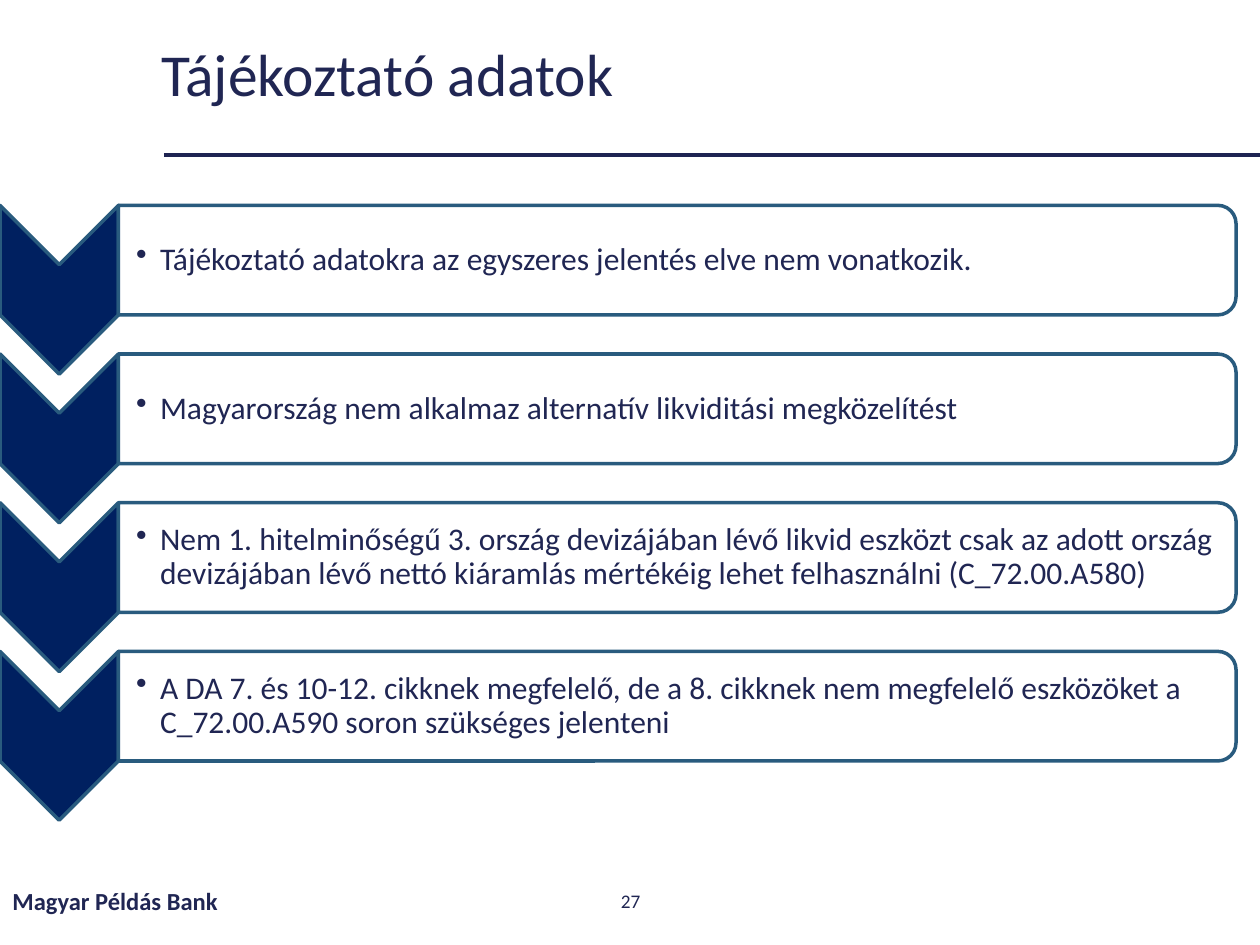
from lxml.etree import SubElement
from pptx import Presentation
from pptx.dml.color import RGBColor
from pptx.enum.shapes import MSO_CONNECTOR, MSO_SHAPE
from pptx.enum.text import MSO_ANCHOR, PP_ALIGN
from pptx.oxml.ns import qn
from pptx.util import Inches, Pt

TITLE = "Tájékoztató adatok"
FOOTER = "Magyar Példás Bank"
PAGE_NUMBER = "27"
STATEMENTS = [
    "Tájékoztató adatokra az egyszeres jelentés elve nem vonatkozik.",
    "Magyarország nem alkalmaz alternatív likviditási megközelítést",
    "Nem 1. hitelminőségű 3. ország devizájában lévő likvid eszközt csak az adott ország "
    "devizájában lévő nettó kiáramlás mértékéig lehet felhasználni (C_72.00.A580)",
    "A DA 7. és 10-12. cikknek megfelelő, de a 8. cikknek nem megfelelő eszközöket a "
    "C_72.00.A590 soron szükséges jelenteni",
]
THEME = {
    "font": "Calibri",
    "text": "202653",
    "rule": "1E2452",
    "chevron": "002060",
    "card": "FFFFFF",
    "outline": "295B7E",
    "title_size": 34,
    "body_size": 18,
    "footer_size": 14,
    "number_size": 11,
}
FIRST_TOP, ROW_PITCH = 1.63, 1.18
CHEVRON_WIDTH, CHEVRON_HEIGHT = 0.94, 1.34
CARD_WIDTH, CARD_HEIGHT = 8.87, 0.87
TEXT_WIDTH, TEXT_HEIGHT = 8.82, 0.79
BULLET_INDENT = 0.19


def color(name):
    return RGBColor.from_string(THEME[name])


def add_text(slide, text, box, size, bold=False, align=PP_ALIGN.LEFT,
             line_spacing=None, insets=(0.1, 0.05, 0.1, 0.05), bullet=False):
    shape = slide.shapes.add_textbox(*map(Inches, box))
    frame = shape.text_frame
    frame.word_wrap = True
    frame.vertical_anchor = MSO_ANCHOR.MIDDLE
    (frame.margin_left, frame.margin_top,
     frame.margin_right, frame.margin_bottom) = map(Inches, insets)
    paragraph = frame.paragraphs[0]
    paragraph.alignment = align
    if bullet:
        properties = paragraph._p.get_or_add_pPr()
        properties.set("marL", str(Inches(BULLET_INDENT)))
        properties.set("indent", str(-Inches(BULLET_INDENT)))
        SubElement(properties, qn("a:buChar")).set("char", "•")
    if line_spacing:
        paragraph.line_spacing = line_spacing
    run = paragraph.add_run()
    run.text = text
    run.font.name = THEME["font"]
    run.font.size = Pt(THEME[size])
    run.font.bold = bold
    run.font.color.rgb = color("text")


def add_turned_shape(slide, kind, left, top, width, height, fill, opacity=100):
    center_x, center_y = left + width / 2, top + height / 2
    shape = slide.shapes.add_shape(
        kind, Inches(center_x - height / 2), Inches(center_y - width / 2),
        Inches(height), Inches(width))
    shape.rotation = 90
    shape.shadow.inherit = False
    shape.fill.solid()
    shape.fill.fore_color.rgb = color(fill)
    if opacity < 100:
        fill_color = shape._element.spPr.find(qn("a:solidFill"))[0]
        SubElement(fill_color, qn("a:alpha")).set("val", str(opacity * 1000))
    shape.line.color.rgb = color("outline")
    shape.line.width = Pt(2)


def add_rule(slide):
    rule = slide.shapes.add_connector(
        MSO_CONNECTOR.STRAIGHT, Inches(1.3), Inches(1.23), Inches(10), Inches(1.23))
    rule.line.color.rgb = color("rule")
    rule.line.width = Pt(2.25)
    SubElement(rule._element.spPr, qn("a:effectLst"))


def add_statement(slide, index, statement):
    top = FIRST_TOP + index * ROW_PITCH
    add_turned_shape(slide, MSO_SHAPE.CHEVRON, 0, top,
                     CHEVRON_WIDTH, CHEVRON_HEIGHT, "chevron")
    add_turned_shape(slide, MSO_SHAPE.ROUND_2_SAME_RECTANGLE, CHEVRON_WIDTH, top,
                     CARD_WIDTH, CARD_HEIGHT, "card", opacity=90)
    text_top = top + (CARD_HEIGHT - TEXT_HEIGHT) / 2
    add_text(slide, statement, (CHEVRON_WIDTH, text_top, TEXT_WIDTH, TEXT_HEIGHT),
             "body_size", line_spacing=0.9, insets=(0.14, 0.01, 0.01, 0.01), bullet=True)


def main():
    presentation = Presentation()
    presentation.slide_width = Inches(10)
    presentation.slide_height = Inches(7.5)
    slide = presentation.slides.add_slide(presentation.slide_layouts[6])
    add_rule(slide)
    add_text(slide, TITLE, (1.18, 0.2, 8.15, 0.83), "title_size", line_spacing=0.9)
    add_text(slide, FOOTER, (0, 6.95, 3.38, 0.4), "footer_size", bold=True)
    add_text(slide, PAGE_NUMBER, (3.88, 6.95, 2.25, 0.4), "number_size",
             align=PP_ALIGN.CENTER)
    for index, statement in enumerate(STATEMENTS):
        add_statement(slide, index, statement)
    presentation.save("out.pptx")


if __name__ == "__main__":
    main()
